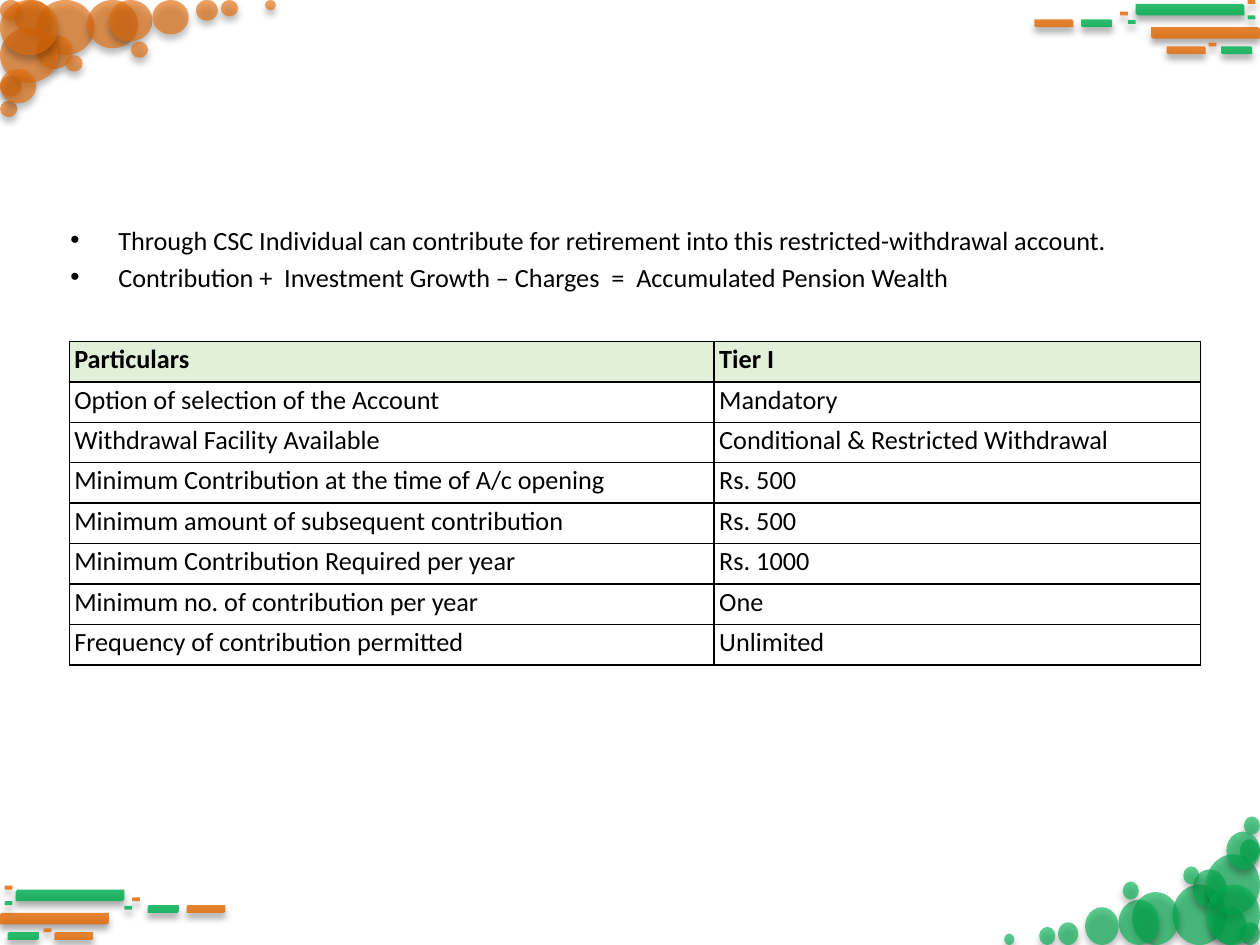
from dataclasses import dataclass

from lxml import etree
from pptx import Presentation
from pptx import util as u
from pptx.dml.color import RGBColor
from pptx.enum import shapes, text
from pptx.oxml import parse_xml
from pptx.oxml.ns import nsdecls, qn


@dataclass(frozen=True)
class Theme:
    font: str = "Calibri"
    size: int = 15
    ink: str = "000000"
    paper: str = "FFFFFF"
    header: str = "E2EFD9"
    green: str = "00B050"
    orange: str = "E36C09"
    bar_opacity: int = 83
    bubble_opacity: int = 63


@dataclass(frozen=True)
class Box:
    left: float
    top: float
    width: float
    height: float

    def emu(self):
        return [u.Inches(v) for v in (self.left, self.top, self.width, self.height)]

    def cell(self, grid, column, row, wide, high, flip_x=False, flip_y=False):
        """Part of this box given in grid units, mirrored on request."""
        columns, rows = grid
        if flip_x:
            column = columns - column - wide
        if flip_y:
            row = rows - row - high
        unit_x, unit_y = self.width / columns, self.height / rows
        return Box(self.left + column * unit_x, self.top + row * unit_y,
                   wide * unit_x, high * unit_y)


THEME = Theme()
PAGE = Box(0, 0, 10, 7.5)

BAR_GRID = (29, 14)
BARS = [  # column, row, width, height, colour
    (13, 1, 14, 3, THEME.green), (15, 7, 14, 3, THEME.orange),
    (6, 5, 4, 2, THEME.green), (24, 12, 4, 2, THEME.green),
    (17, 12, 5, 2, THEME.orange), (0, 5, 5, 2, THEME.orange),
    (11, 3, 1, 1, THEME.orange), (12, 5.2, 1, 1, THEME.green),
    (22.4, 11, 1, 1, THEME.orange), (27.4, 4, 1, 1, THEME.green),
    (27.4, 0, 1, 1, THEME.orange),
]

BUBBLE_GRID = (38, 17)
BUBBLES = [  # column, row, diameter
    (5, 0, 8), (12, 0, 7), (5, 5, 5), (15, 0, 6), (21, 0, 5), (2, 0, 5),
    (27, 0, 3), (0, 11, 3), (18, 6, 2.4), (9, 8, 2.4), (0, 14.6, 2.4),
    (36.5, 0, 1.5), (30.4, 0, 2.4), (0, 0, 3), (0, 4, 8), (0, 10, 5), (0, 0, 8),
]

POINTS = [
    "Through CSC Individual can contribute for retirement into this "
    "restricted-withdrawal account.",
    "Contribution +  Investment Growth – Charges  =  Accumulated Pension Wealth",
]

TIER_ROWS = [
    ("Particulars", "Tier I"),
    ("Option of selection of the Account", "Mandatory"),
    ("Withdrawal Facility Available", "Conditional & Restricted Withdrawal"),
    ("Minimum Contribution at the time of A/c opening", "Rs. 500"),
    ("Minimum amount of subsequent contribution", "Rs. 500"),
    ("Minimum Contribution Required per year", "Rs. 1000"),
    ("Minimum no. of contribution per year", "One"),
    ("Frequency of contribution permitted", "Unlimited"),
]


def apply(target, **values):
    for name, value in values.items():
        setattr(target, name, value)


def style_font(font, bold=False):
    apply(font, name=THEME.font, size=u.Pt(THEME.size), bold=bold)
    font.color.rgb = RGBColor.from_string(THEME.ink)


def add_ornament(group, kind, box, colour, opacity):
    """Translucent shape without outline that casts a soft shadow downwards."""
    shape = group.shapes.add_shape(kind, *box.emu())
    shape.fill.solid()
    shape.fill.fore_color.rgb = RGBColor.from_string(colour)
    shape.line.fill.background()
    properties = shape.fill._xPr
    paint = properties.find(qn("a:solidFill"))[0]
    etree.SubElement(paint, qn("a:alpha"), val=str(opacity * 1000))
    properties.append(parse_xml(
        f'<a:effectLst {nsdecls("a")}><a:outerShdw blurRad="{u.Pt(4)}" '
        f'dist="{u.Pt(3)}" dir="5400000" rotWithShape="0">'
        f'<a:srgbClr val="{THEME.ink}"><a:alpha val="40000"/></a:srgbClr>'
        '</a:outerShdw></a:effectLst>'))
    return shape


def add_bars(page, box, mirrored=False):
    group = page.shapes.add_group_shape()
    for *place, colour in BARS:
        bar = add_ornament(group, shapes.MSO_SHAPE.SNIP_2_DIAG_RECTANGLE,
                           box.cell(BAR_GRID, *place, flip_x=mirrored),
                           colour, THEME.bar_opacity)
        bar.adjustments[0], bar.adjustments[1] = 0, 0.167
        if mirrored:
            bar._element.spPr.find(qn("a:xfrm")).set("flipH", "1")


def add_bubbles(page, box, colour, turned=False):
    group = page.shapes.add_group_shape()
    for column, row, size in BUBBLES:
        place = box.cell(BUBBLE_GRID, column, row, size, size, turned, turned)
        bubble = add_ornament(group, shapes.MSO_SHAPE.OVAL, place, colour,
                              THEME.bubble_opacity)
        bubble.rotation = 180 if turned else 0


def add_points(page, box):
    frame = page.shapes.add_textbox(*box.emu()).text_frame
    apply(frame, word_wrap=True, margin_left=u.Inches(0.06),
          margin_right=u.Inches(0.06), margin_top=u.Inches(0.03),
          margin_bottom=u.Inches(0.03))
    indent = u.Inches(0.38)
    for index, point in enumerate(POINTS):
        para = frame.add_paragraph() if index else frame.paragraphs[0]
        para.text = point
        if index:
            para.space_before = u.Pt(3)
        properties = para._p.get_or_add_pPr()
        properties.set("marL", str(indent))
        properties.set("indent", str(-indent))
        etree.SubElement(properties, qn("a:buFont"), typeface="Arial")
        etree.SubElement(properties, qn("a:buChar"), char="•")
        style_font(para.font)


def add_borders(cell):
    properties = cell._tc.get_or_add_tcPr()
    for index, side in enumerate(("lnL", "lnR", "lnT", "lnB")):
        properties.insert(index, parse_xml(
            f'<a:{side} {nsdecls("a")} w="{u.Pt(1)}"><a:solidFill>'
            f'<a:srgbClr val="{THEME.ink}"/></a:solidFill></a:{side}>'))


def add_tier_table(page, box, shares):
    table = page.shapes.add_table(len(TIER_ROWS), len(shares), *box.emu()).table
    for column, share in zip(table.columns, shares):
        column.width = u.Inches(box.width * share)
    for index, values in enumerate(TIER_ROWS):
        is_header = index == 0
        for cell, value in zip(table.rows[index].cells, values):
            apply(cell, text=value, margin_left=u.Inches(0.04),
                  margin_right=u.Inches(0.04), margin_top=0, margin_bottom=0)
            cell.fill.solid()
            cell.fill.fore_color.rgb = RGBColor.from_string(
                THEME.header if is_header else THEME.paper)
            add_borders(cell)
            para = cell.text_frame.paragraphs[0]
            apply(para, alignment=text.PP_ALIGN.JUSTIFY, line_spacing=1.07)
            style_font(para.runs[0].font, bold=is_header)


def build_slide(deck):
    page = deck.slides.add_slide(deck.slide_layouts[6])
    add_bars(page, Box(8.21, 0, 1.79, 0.43))
    add_bubbles(page, Box(7.97, 6.48, 2.03, 1.02), THEME.green, turned=True)
    add_bars(page, Box(0, 7.03, 1.79, 0.43), mirrored=True)
    add_bubbles(page, Box(0, 0, 2.19, 0.93), THEME.orange)
    add_points(page, Box(0.5, 1.75, 9, 4.95))
    add_tier_table(page, Box(0.55, 2.71, 8.98, 2.57), (0.57, 0.43))


def main():
    deck = Presentation()
    apply(deck, slide_width=u.Inches(PAGE.width), slide_height=u.Inches(PAGE.height))
    build_slide(deck)
    deck.save("out.pptx")


if __name__ == "__main__":
    main()
